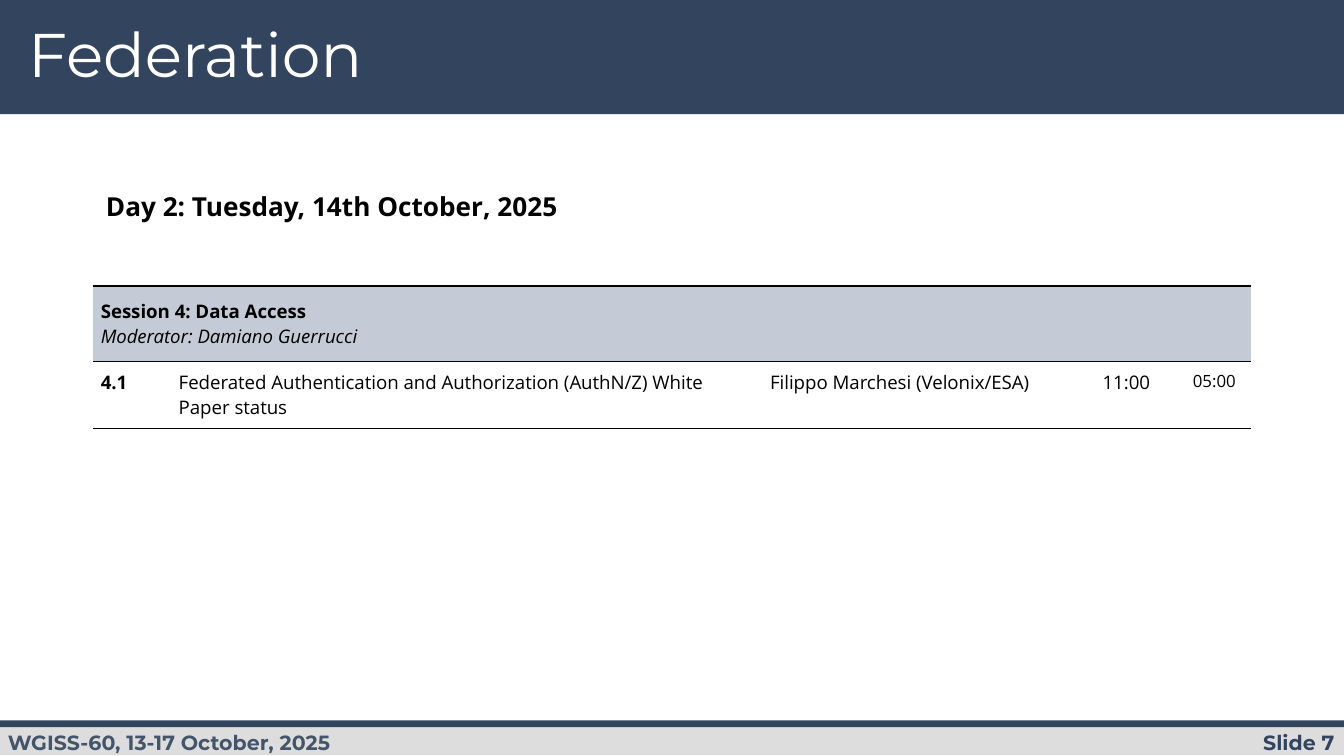
"""Build the Federation agenda slide with its session table."""
import pptx
import pptx.util
import pptx.dml.color
import pptx.enum.shapes
import pptx.enum.text
import pptx.oxml
import pptx.oxml.ns

Inches = pptx.util.Inches
RGBColor = pptx.dml.color.RGBColor
ALIGN = pptx.enum.text.PP_ALIGN
ANCHOR = pptx.enum.text.MSO_ANCHOR

NAVY = RGBColor(0x33, 0x44, 0x5F)
SLATE = RGBColor(0x44, 0x54, 0x6A)
GREY = RGBColor(0xDD, 0xDD, 0xDD)
MIST = RGBColor(0xC4, 0xCB, 0xD7)
WHITE = RGBColor(0xFF, 0xFF, 0xFF)
BLACK = RGBColor(0, 0, 0)
HEAD = "Montserrat"
BODY = "Open Sans"

BARS = [
    ((0, 0, 10, 0.85), NAVY),
    ((0, 5.39, 10, 0.23), GREY),
    ((0, 5.36, 10, 0.05), NAVY),
]
LABELS = [
    ("Slide 7", (8.42, 5.39, 1.58, 0.26), (0.07, 0.04),
     dict(size=11, font=HEAD, color=NAVY, bold=True, align=ALIGN.RIGHT)),
    ("WGISS-60, 13-17 October, 2025", (-0.04, 5.34, 3.16, 0.39), (0.1, 0.1),
     dict(size=11, font=HEAD, color=SLATE, bold=True)),
    ("Federation", (0.14, 0.14, 7.7, 0.64), (0.07, 0.04),
     dict(size=33, font=HEAD, color=WHITE, space=0.9)),
    ("Day 2: Tuesday, 14th October, 2025", (0.69, 1.37, 5.04, 0.34),
     (0.1, 0.05), dict(size=14, bold=True)),
]
SESSION = [
    ("Session 4: Data Access", dict(bold=True)),
    ("Moderator: Damiano Guerrucci", dict(italic=True)),
]
TALK = [
    ("4.1", dict(bold=True)),
    ("Federated Authentication and Authorization (AuthN/Z) White Paper status", {}),
    ("Filippo Marchesi (Velonix/ESA)", {}),
    ("11:00", dict(align=ALIGN.CENTER)),
    ("05:00", dict(align=ALIGN.CENTER, size=9)),
]
COLS = [0.58, 4.4, 2.33, 0.76, 0.55]
ROWS = [0.56, 0.5]
PAD = 0.06


def write(frame, text, size=10, font=BODY, color=BLACK, bold=False,
          italic=False, align=ALIGN.LEFT, space=None, more=False):
    para = frame.add_paragraph() if more else frame.paragraphs[0]
    para.alignment = align
    if space:
        para.line_spacing = space
    run = para.add_run()
    run.text = text
    run.font.size = pptx.util.Pt(size)
    run.font.name = font
    run.font.color.rgb = color
    run.font.bold = bold
    run.font.italic = italic


def edge(cell, side, width):
    paint = '<a:solidFill><a:srgbClr val="000000"/></a:solidFill>' if width else "<a:noFill/>"
    cell._tc.get_or_add_tcPr().append(pptx.oxml.parse_xml(
        f'<a:ln{side} {pptx.oxml.ns.nsdecls("a")} w="{pptx.util.Pt(width)}">{paint}</a:ln{side}>'))


def style(cell, fill, top, base):
    for side, width in zip("LRTB", (0, 0, top, base)):
        edge(cell, side, width)
    cell.fill.solid()
    cell.fill.fore_color.rgb = fill
    cell.margin_left = cell.margin_right = Inches(PAD)
    cell.margin_top = cell.margin_bottom = Inches(PAD)


def main():
    deck = pptx.Presentation()
    deck.slide_width = Inches(10)
    deck.slide_height = Inches(10) * 9 // 16
    slide = deck.slides.add_slide(deck.slide_layouts[6])
    shapes = slide.shapes

    for box, color in BARS:
        bar = shapes.add_shape(pptx.enum.shapes.MSO_SHAPE.RECTANGLE, *map(Inches, box))
        bar.shadow.inherit = False
        bar.fill.solid()
        bar.fill.fore_color.rgb = color
        bar.line.fill.background()

    for text, box, (side, top), form in LABELS:
        frame = shapes.add_textbox(*map(Inches, box)).text_frame
        frame.word_wrap = True
        frame.margin_left = frame.margin_right = Inches(side)
        frame.margin_top = frame.margin_bottom = Inches(top)
        write(frame, text, **form)

    table = shapes.add_table(len(ROWS), len(COLS), Inches(0.69), Inches(2.13),
                             Inches(sum(COLS)), Inches(sum(ROWS))).table
    table.first_row = table.horz_banding = False
    for col, width in zip(table.columns, COLS):
        col.width = Inches(width)
    for row, height in zip(table.rows, ROWS):
        row.height = Inches(height)
    for num, (text, form) in enumerate(TALK):
        rule = 1 if num else 0.5
        style(table.cell(0, num), MIST, 1, rule)
        cell = table.cell(1, num)
        style(cell, WHITE, rule, 1)
        write(cell.text_frame, text, **form)
    lead = table.cell(0, 0)
    lead.merge(table.cell(0, len(COLS) - 1))
    lead.vertical_anchor = ANCHOR.MIDDLE
    for num, (text, form) in enumerate(SESSION):
        write(lead.text_frame, text, more=num > 0, **form)

    deck.save("out.pptx")


if __name__ == "__main__":
    main()
